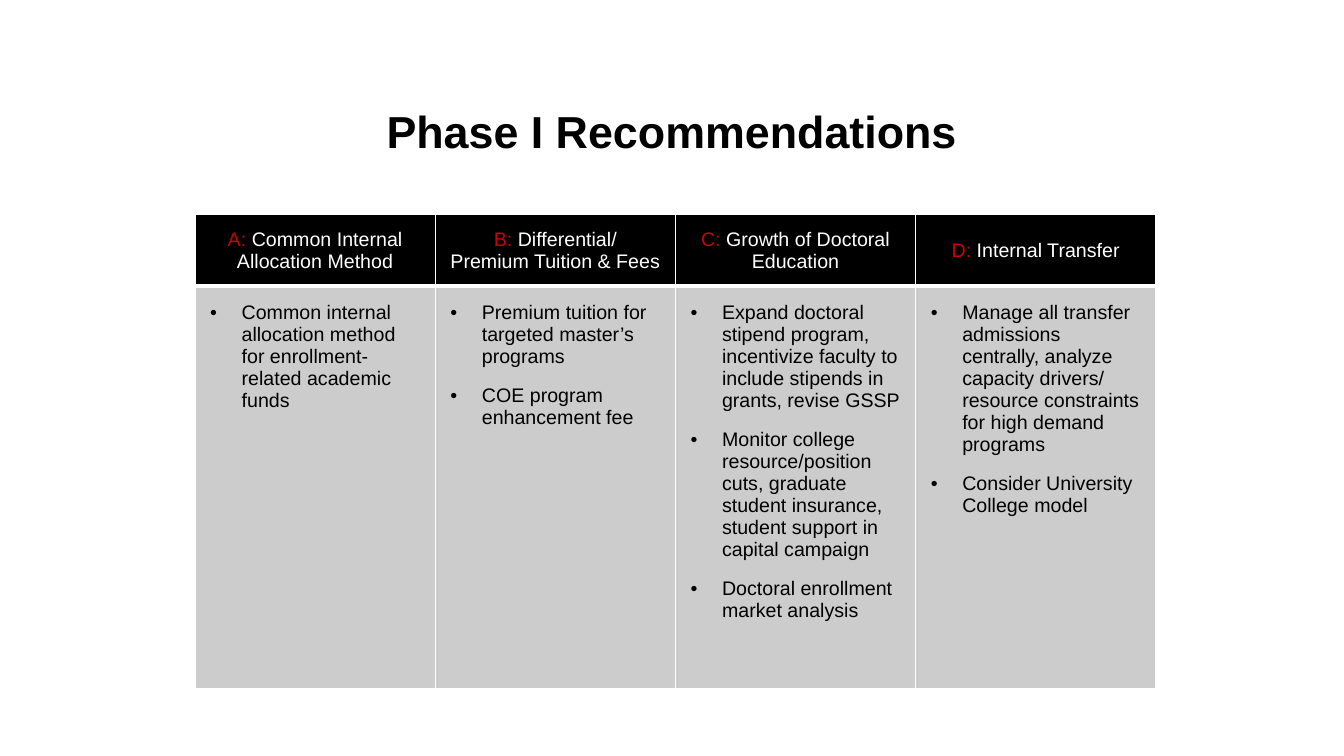
from pptx import Presentation
from pptx.dml.color import RGBColor
from pptx.enum.text import MSO_ANCHOR as Anchor, PP_ALIGN as Align
from pptx.oxml.ns import qn
from pptx.util import Pt
from lxml.etree import SubElement

BLACK, WHITE, RED, GRAY = "000000", "FFFFFF", "CC0000", "CCCCCC"
INDENT = 22.5
HEADER_BORDERS = {"L": 1, "R": 1, "T": 1, "B": 3}
BODY_BORDERS = {"L": 1, "R": 1, "T": 1, "B": 1}

# Letter, heading lines, bullets
RECOMMENDATIONS = [
    ("A:", ["Common Internal Allocation Method"],
     ["Common internal allocation method for enrollment-related academic funds"]),
    ("B:", ["Differential/", "Premium Tuition & Fees"],
     ["Premium tuition for targeted master’s programs",
      "COE program enhancement fee"]),
    ("C:", ["Growth of Doctoral Education"],
     ["Expand doctoral stipend program, incentivize faculty to include stipends "
      "in grants, revise GSSP",
      "Monitor college resource/position cuts, graduate student insurance, "
      "student support in capital campaign",
      "Doctoral enrollment market analysis"]),
    ("D:", ["Internal Transfer"],
     ["Manage all transfer admissions centrally, analyze capacity drivers/ "
      "resource constraints for high demand programs",
      "Consider University College model"]),
]


def color(hex_value):
    return RGBColor.from_string(hex_value)


def set_all(target, **formats):
    for name, value in formats.items():
        setattr(target, name, value)


def add_run(paragraph, text, size, hex_value, bold=False):
    run = paragraph.add_run()
    run.text = text
    set_all(run.font, name="Arial", size=Pt(size), bold=bold)
    run.font.color.rgb = color(hex_value)


def next_paragraph(frame, index):
    return frame.add_paragraph() if index else frame.paragraphs[0]


def add_bullet(paragraph):
    props = paragraph._p.get_or_add_pPr()
    props.set("marL", str(Pt(INDENT)))
    props.set("indent", str(-Pt(INDENT)))
    SubElement(props, qn("a:buFont"), typeface="Arial")
    SubElement(props, qn("a:buChar"), char="•")


def style_cell(cell, fill, borders):
    # Borders come before the fill in the cell properties
    props = cell._tc.get_or_add_tcPr()
    for side, width in borders.items():
        line = SubElement(props, qn(f"a:ln{side}"), w=str(Pt(width)))
        solid = SubElement(line, qn("a:solidFill"))
        SubElement(solid, qn("a:srgbClr"), val=WHITE)
    cell.fill.solid()
    cell.fill.fore_color.rgb = color(fill)


def fill_heading(cell, letter, lines):
    style_cell(cell, BLACK, HEADER_BORDERS)
    cell.vertical_anchor = Anchor.MIDDLE
    for index, line in enumerate(lines):
        paragraph = next_paragraph(cell.text_frame, index)
        paragraph.alignment = Align.CENTER
        if index == 0:
            add_run(paragraph, letter, 14, RED)
            line = " " + line
        add_run(paragraph, line, 14, WHITE)


def fill_bullets(cell, bullets):
    style_cell(cell, GRAY, BODY_BORDERS)
    inset = Pt(10.8)
    set_all(cell, margin_left=inset, margin_right=inset,
            margin_top=inset, margin_bottom=inset)
    for index, bullet in enumerate(bullets):
        paragraph = next_paragraph(cell.text_frame, index)
        add_bullet(paragraph)
        if len(bullets) > 1:
            paragraph.space_after = Pt(12)
        add_run(paragraph, bullet, 14, BLACK)


def add_title(slide, left, top, width, height):
    box = slide.shapes.add_textbox(Pt(left), Pt(top), Pt(width), Pt(height))
    frame = box.text_frame
    set_all(frame, word_wrap=True, vertical_anchor=Anchor.MIDDLE)
    frame.paragraphs[0].alignment = Align.CENTER
    add_run(frame.paragraphs[0], "Phase I Recommendations", 32, BLACK, bold=True)


def add_recommendations(slide, left, top, width, height):
    count = len(RECOMMENDATIONS)
    grid = slide.shapes.add_table(2, count, Pt(left), Pt(top),
                                  Pt(width), Pt(height)).table
    heading_height = 51.2
    grid.rows[0].height = Pt(heading_height)
    grid.rows[1].height = Pt(height - heading_height)
    for index, (letter, lines, bullets) in enumerate(RECOMMENDATIONS):
        grid.columns[index].width = Pt(width / count)
        fill_heading(grid.cell(0, index), letter, lines)
        fill_bullets(grid.cell(1, index), bullets)


def main():
    deck = Presentation()
    set_all(deck, slide_width=Pt(960), slide_height=Pt(540))
    slide = deck.slides.add_slide(deck.slide_layouts[6])
    add_title(slide, 120, 52.5, 720, 81)
    add_recommendations(slide, 139.3, 153.3, 686.4, 338.4)
    deck.save("out.pptx")


if __name__ == "__main__":
    main()
